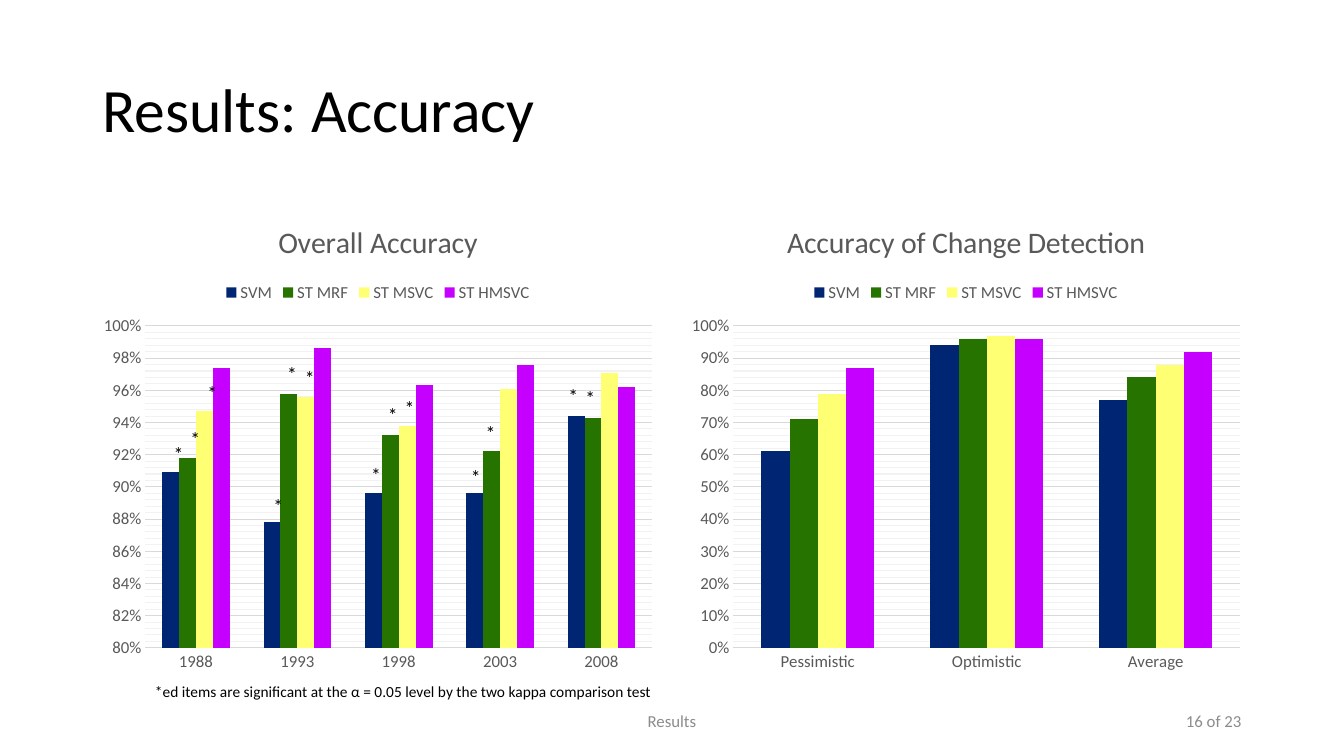
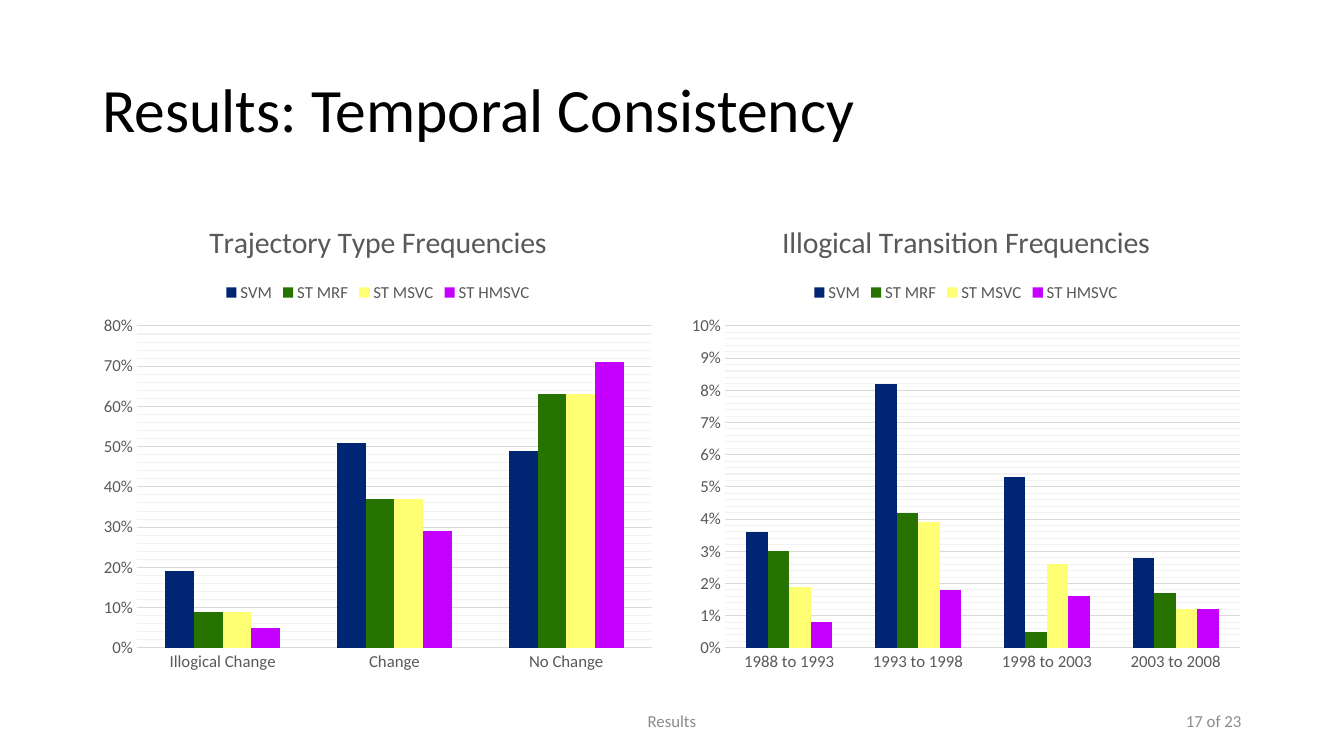
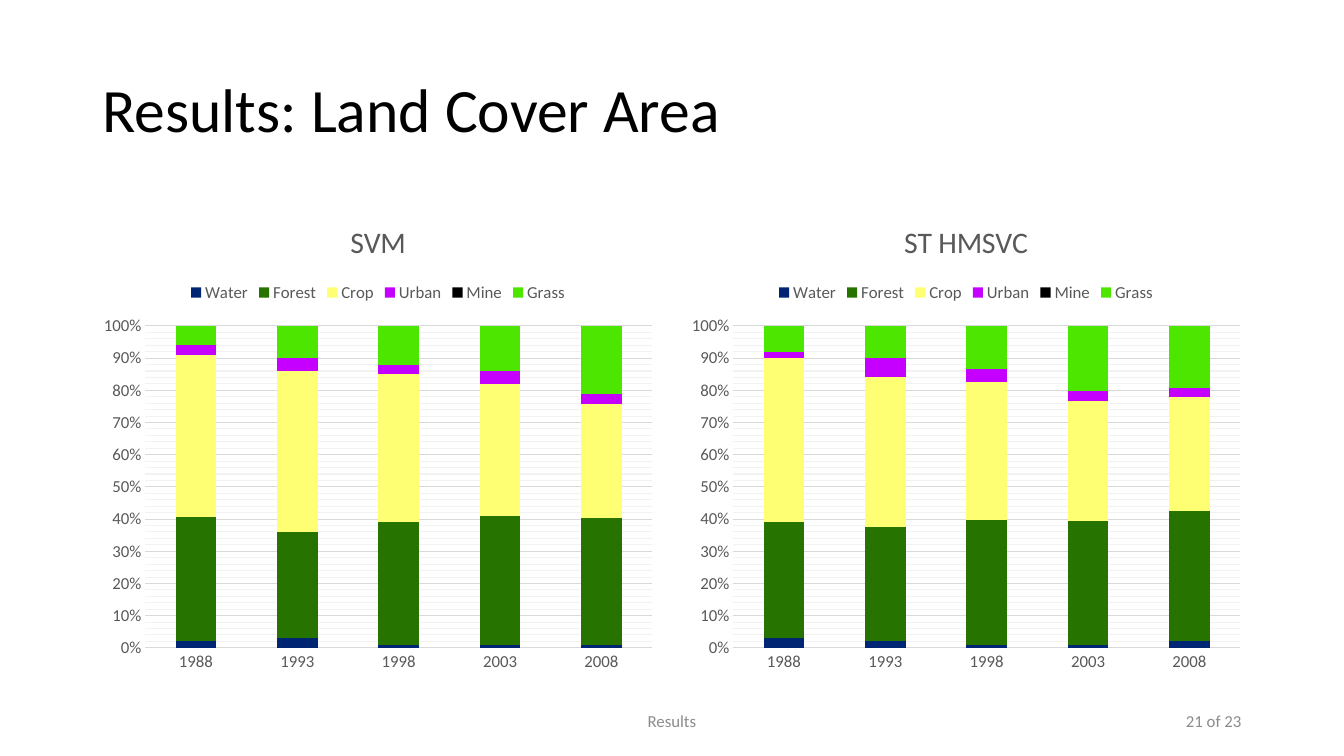
"""Build three slides of classification results with paired column charts."""
from copy import deepcopy
from dataclasses import dataclass

from pptx import Presentation
from pptx.chart.data import CategoryChartData
from pptx.dml.color import RGBColor
from pptx.enum.chart import XL_CHART_TYPE, XL_LEGEND_POSITION, XL_TICK_MARK
from pptx.enum.dml import MSO_LINE
from pptx.enum.text import MSO_ANCHOR, MSO_AUTO_SIZE, PP_ALIGN
from pptx.oxml.ns import qn
from pptx.util import Emu, Pt

CLUSTERED = XL_CHART_TYPE.COLUMN_CLUSTERED
STACKED = XL_CHART_TYPE.COLUMN_STACKED_100
LEGEND_TOP = XL_LEGEND_POSITION.TOP
NO_TICK = XL_TICK_MARK.NONE
SOLID = MSO_LINE.SOLID
TOP, MIDDLE = MSO_ANCHOR.TOP, MSO_ANCHOR.MIDDLE
NO_FIT = MSO_AUTO_SIZE.NONE
LEFT, CENTER, RIGHT = PP_ALIGN.LEFT, PP_ALIGN.CENTER, PP_ALIGN.RIGHT

EMU_PER_PX = 9525
TITLE_LAYOUT = 5


@dataclass(frozen=True)
class Theme:
    """Fonts, sizes and colours shared by all slides."""
    font: str = "Calibri"
    title_size: float = 44
    chart_title_size: float = 21.3
    label_size: float = 12
    star_size: float = 14
    note_size: float = 11
    ink: str = "000000"
    footer: str = "8C8C8C"
    label: str = "595959"
    grid: str = "D9D9D9"
    minor_grid: str = "F2F2F2"
    series: tuple = ("002673", "267300", "FFFF73", "C500FF", "000000", "4CE600")


THEME = Theme()

SLIDE_SIZE = (1280, 720)
TITLE_BOX = (88, 38, 1104, 139)
CHART_BOXES = ((88, 192, 544, 457), (648, 192, 544, 457))
FOOTER_BOX = (424, 667, 432, 38)
NUMBER_BOX = (904, 667, 288, 38)
NOTE_BOX = (123, 645, 507, 28)
STAR_SIZE = (30, 33)
STAR_POINTS = (
    (156, 416), (172, 402), (188, 358),
    (251, 466), (264, 340), (281, 344),
    (344, 436), (360, 379), (376, 372),
    (439, 438), (453, 396),
    (532, 361), (548, 363),
)

METHODS = ("SVM", "ST MRF", "ST MSVC", "ST HMSVC")
COVERS = ("Water", "Forest", "Crop", "Urban", "Mine", "Grass")
YEARS = ("1988", "1993", "1998", "2003", "2008")


@dataclass(frozen=True)
class ColumnChart:
    """Content of one column chart; scale is minimum, maximum, major unit."""
    title: str
    categories: tuple
    names: tuple
    rows: tuple
    scale: tuple = ()
    kind: int = CLUSTERED


OVERALL = ColumnChart("Overall Accuracy", YEARS, METHODS, (
    (0.909, 0.878, 0.896, 0.896, 0.944),
    (0.918, 0.958, 0.932, 0.922, 0.943),
    (0.947, 0.956, 0.938, 0.961, 0.971),
    (0.974, 0.986, 0.963, 0.976, 0.962),
), (0.8, 1, 0.02))

CHANGE_DETECTION = ColumnChart(
    "Accuracy of Change Detection", ("Pessimistic", "Optimistic", "Average"), METHODS, (
        (0.61, 0.94, 0.77),
        (0.71, 0.96, 0.84),
        (0.79, 0.97, 0.88),
        (0.87, 0.96, 0.92),
    ), (0, 1, 0.1))

TRAJECTORIES = ColumnChart(
    "Trajectory Type Frequencies", ("Illogical Change", "Change", "No Change"), METHODS, (
        (0.19, 0.51, 0.49),
        (0.09, 0.37, 0.63),
        (0.09, 0.37, 0.63),
        (0.05, 0.29, 0.71),
    ), (0, 0.8, 0.1))

TRANSITIONS = ColumnChart(
    "Illogical Transition Frequencies",
    tuple(f"{start} to {end}" for start, end in zip(YEARS, YEARS[1:])), METHODS, (
        (0.036, 0.082, 0.053, 0.028),
        (0.03, 0.042, 0.005, 0.017),
        (0.019, 0.039, 0.026, 0.012),
        (0.008, 0.018, 0.016, 0.012),
    ), (0, 0.1, 0.01))

SVM_AREA = ColumnChart("SVM", YEARS, COVERS, (
    (2, 3, 1, 1, 1),
    (39, 33, 38, 40, 39),
    (51, 50, 46, 41, 35),
    (3, 4, 3, 4, 3),
    (0, 0, 0, 0, 0),
    (6, 10, 12, 14, 21),
), kind=STACKED)

HMSVC_AREA = ColumnChart("ST HMSVC", YEARS, COVERS, (
    (3, 2, 1, 1, 2),
    (36, 36, 38, 38, 40),
    (51, 47, 42, 37, 35),
    (2, 6, 4, 3, 3),
    (0, 0, 0, 0, 0),
    (8, 10, 13, 20, 19),
), kind=STACKED)


def px(*lengths):
    """Turn pixel lengths into EMU."""
    return [Emu(length * EMU_PER_PX) for length in lengths]


def style_font(font, size, color):
    """Apply the shared typeface with a size and a colour."""
    font.name = THEME.font
    font.size = Pt(size)
    font.bold = False
    font.color.rgb = RGBColor.from_string(color)


def style_line(line, color):
    """Give a chart line its colour and the shared width."""
    line.dash_style = SOLID
    line.width = Pt(0.75)
    line.color.rgb = RGBColor.from_string(color)


def write_text(frame, text, size, color, align, anchor):
    """Fill a text frame with one formatted paragraph."""
    frame.text = text
    frame.word_wrap = True
    frame.auto_size = NO_FIT
    frame.vertical_anchor = anchor
    paragraph = frame.paragraphs[0]
    paragraph.alignment = align
    style_font(paragraph.font, size, color)
    return paragraph


def add_text(slide, box, text, size, color=THEME.ink, align=LEFT, anchor=TOP):
    """Add a text box."""
    shape = slide.shapes.add_textbox(*px(*box))
    write_text(shape.text_frame, text, size, color, align, anchor)


def style_gridlines(value_axis):
    """Show major gridlines and paler minor ones of the same width."""
    value_axis.has_major_gridlines = value_axis.has_minor_gridlines = True
    style_line(value_axis.major_gridlines.format.line, THEME.grid)
    axis_element = value_axis._element
    major = axis_element.find(qn("c:majorGridlines"))
    properties = deepcopy(major.find(qn("c:spPr")))
    for color in properties.iter(qn("a:srgbClr")):
        color.set("val", THEME.minor_grid)
    axis_element.find(qn("c:minorGridlines")).append(properties)


def style_axes(chart, scale):
    """Format both axes, the gridlines and the value scale."""
    category_axis, value_axis = chart.category_axis, chart.value_axis
    for axis in (category_axis, value_axis):
        axis.major_tick_mark = axis.minor_tick_mark = NO_TICK
        style_font(axis.tick_labels.font, THEME.label_size, THEME.label)
    style_line(category_axis.format.line, THEME.grid)
    value_axis.format.line.fill.background()
    value_axis.tick_labels.number_format = "0%"
    value_axis.tick_labels.number_format_is_linked = False
    style_gridlines(value_axis)
    if scale:
        value_axis.minimum_scale, value_axis.maximum_scale, value_axis.major_unit = scale


def add_column_chart(slide, box, content):
    """Add a column chart with title, top legend and series colours."""
    data = CategoryChartData()
    data.categories = content.categories
    for name, values in zip(content.names, content.rows):
        data.add_series(name, values)
    chart = slide.shapes.add_chart(content.kind, *px(*box), data).chart
    style_font(chart.font, THEME.label_size, THEME.label)
    chart.has_title = True
    chart.chart_title.text_frame.text = content.title
    title = chart.chart_title.text_frame.paragraphs[0]
    style_font(title.font, THEME.chart_title_size, THEME.label)
    chart.has_legend = True
    chart.legend.position = LEGEND_TOP
    chart.legend.include_in_layout = False
    style_font(chart.legend.font, THEME.label_size, THEME.label)
    style_axes(chart, content.scale)
    plot = chart.plots[0]
    plot.vary_by_categories = False
    plot.gap_width, plot.overlap = (150, 100) if content.kind == STACKED else (199, 0)
    for series, color in zip(plot.series, THEME.series):
        series.format.fill.solid()
        series.format.fill.fore_color.rgb = RGBColor.from_string(color)


def add_result_slide(presentation, title, number, charts):
    """Add a slide with a title, two charts and the footer."""
    slide = presentation.slides.add_slide(presentation.slide_layouts[TITLE_LAYOUT])
    shape = slide.shapes.title
    shape.left, shape.top, shape.width, shape.height = px(*TITLE_BOX)
    paragraph = write_text(
        shape.text_frame, f"Results: {title}", THEME.title_size, THEME.ink, LEFT, MIDDLE)
    paragraph.line_spacing = 0.9
    for box, content in zip(CHART_BOXES, charts):
        add_column_chart(slide, box, content)
    add_text(slide, FOOTER_BOX, "Results", THEME.label_size, THEME.footer, CENTER, MIDDLE)
    add_text(slide, NUMBER_BOX, f"{number} of 23", THEME.label_size, THEME.footer, RIGHT, MIDDLE)
    return slide


def add_significance(slide):
    """Mark the significant columns and explain the mark."""
    for point in STAR_POINTS:
        add_text(slide, point + STAR_SIZE, "*", THEME.star_size)
    add_text(
        slide, NOTE_BOX,
        "*ed items are significant at the α = 0.05 level by the two kappa comparison test",
        THEME.note_size, align=RIGHT)


def main():
    """Build and save the presentation."""
    presentation = Presentation()
    presentation.slide_width, presentation.slide_height = px(*SLIDE_SIZE)
    accuracy = add_result_slide(presentation, "Accuracy", 16, (OVERALL, CHANGE_DETECTION))
    add_significance(accuracy)
    add_result_slide(presentation, "Temporal Consistency", 17, (TRAJECTORIES, TRANSITIONS))
    add_result_slide(presentation, "Land Cover Area", 21, (SVM_AREA, HMSVC_AREA))
    presentation.save("out.pptx")


if __name__ == "__main__":
    main()
